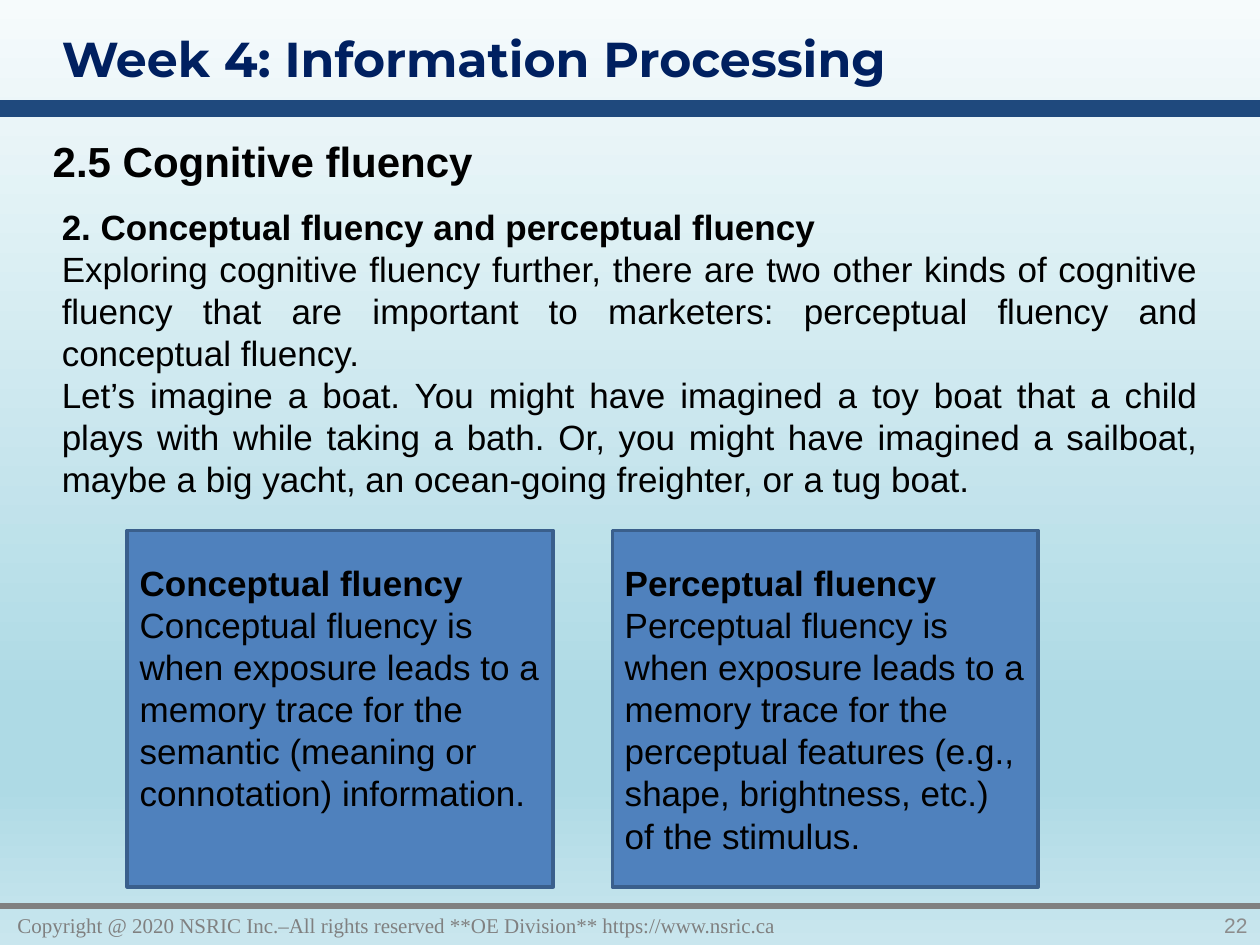
import pptx
import pptx.oxml
import pptx.util
import pptx.dml.color
import pptx.enum.shapes
import pptx.enum.text
from lxml import etree

Inches, Pt = pptx.util.Inches, pptx.util.Pt
RGB = pptx.dml.color.RGBColor
ALIGN, ANCHOR = pptx.enum.text.PP_ALIGN, pptx.enum.text.MSO_ANCHOR

BLACK = RGB(0x00, 0x00, 0x00)
NAVY = RGB(0x00, 0x20, 0x60)
BAND = RGB(0x1F, 0x49, 0x7D)
GREY = RGB(0x80, 0x80, 0x80)
LIGHT_GREY = RGB(0x8C, 0x8C, 0x8C)
CARD = RGB(0x4F, 0x81, 0xBD)
CARD_EDGE = RGB(0x3A, 0x5F, 0x8C)
SKY = [(0, RGB(0xF6, 0xFB, 0xFC)), (74, RGB(0xAE, 0xDA, 0xE5)),
       (83, RGB(0xAE, 0xDA, 0xE5)), (100, RGB(0xC9, 0xE6, 0xEE))]


class SlideBuilder:
    font, size, color = "Arial", 20, BLACK

    def __init__(self, slide):
        self.slide = slide

    def background(self, stops):
        fill = self.slide.background.fill
        fill.gradient()
        fill.gradient_angle = 270  # top to bottom
        stop_list = self.slide.element.find(".//" + pptx.oxml.ns.qn("a:gsLst"))
        for old in list(stop_list):
            stop_list.remove(old)
        for percent, color in stops:
            stop = etree.SubElement(stop_list, pptx.oxml.ns.qn("a:gs"), pos=str(percent * 1000))
            etree.SubElement(stop, pptx.oxml.ns.qn("a:srgbClr"), val=str(color))

    def rule(self, y, color, width):
        line = self.slide.shapes.add_connector(
            pptx.enum.shapes.MSO_CONNECTOR.STRAIGHT, 0, Inches(y), Inches(10), Inches(y))
        line.line.color.rgb = color
        line.line.width = Pt(width)
        etree.SubElement(line._element.spPr, pptx.oxml.ns.qn("a:effectLst"))

    def set_text(self, sp, lines, bold_first=False, size=None, color=None, font=None,
                 align=ALIGN.LEFT, anchor=ANCHOR.TOP):
        tf = sp.text_frame
        tf.text = "\n".join(lines)
        tf.word_wrap = True
        tf.auto_size = pptx.enum.text.MSO_AUTO_SIZE.NONE
        tf.vertical_anchor = anchor
        for i, p in enumerate(tf.paragraphs):
            p.alignment = align
            p.space_before = p.space_after = Pt(0)
            for r in p.runs:
                r.font.name = font or self.font
                r.font.size = Pt(size or self.size)
                r.font.bold = bold_first and i == 0
                r.font.color.rgb = color or self.color

    def placeholder(self, sp, box, lines, **style):
        sp.left, sp.top, sp.width, sp.height = map(Inches, box)
        self.set_text(sp, lines, **style)
        for p in sp.text_frame.paragraphs:
            pPr = p._p.get_or_add_pPr()
            pPr.set("marL", "0")
            pPr.set("indent", "0")
            etree.SubElement(pPr, pptx.oxml.ns.qn("a:buNone"))

    def text(self, box, line, **style):
        self.set_text(self.slide.shapes.add_textbox(*map(Inches, box)), [line], **style)

    def card(self, box, lines):
        sp = self.slide.shapes.add_shape(
            pptx.enum.shapes.MSO_SHAPE.RECTANGLE, *map(Inches, box))
        sp.shadow.inherit = False
        sp.fill.solid()
        sp.fill.fore_color.rgb = CARD
        sp.line.color.rgb = CARD_EDGE
        sp.line.width = Pt(2)
        sp.text_frame.margin_top = Inches(0.25)
        self.set_text(sp, lines, bold_first=True)


def main():
    prs = pptx.Presentation()
    prs.slide_width, prs.slide_height = Inches(10), Inches(7.5)
    s = prs.slides.add_slide(prs.slide_layouts[1])
    b = SlideBuilder(s)

    # Background, rules and footer
    b.background(SKY)
    b.rule(0.86, BAND, 10)
    b.rule(7.19, GREY, 3)
    b.text((0.04, 7.19, 8.27, 0.31),
           "Copyright @ 2020 NSRIC Inc.–All rights reserved **OE Division** https://www.nsric.ca",
           size=12, color=GREY, font="Times New Roman", anchor=ANCHOR.MIDDLE)
    b.text((8.59, 7.19, 1.41, 0.31), "22", size=12, color=LIGHT_GREY,
           align=ALIGN.RIGHT, anchor=ANCHOR.MIDDLE)

    # Title, section heading and body
    b.placeholder(s.shapes.title, (0.39, 0.18, 8.76, 0.57), ["Week 4: Information Processing"],
                  bold_first=True, size=28, color=NAVY, font="Montserrat")
    b.text((0.32, 1.03, 9.66, 0.5), "2.5 Cognitive fluency", bold_first=True, size=24)
    b.placeholder(s.placeholders[1], (0.39, 1.58, 9.22, 2.5), [
        "2. Conceptual fluency and perceptual fluency",
        "Exploring cognitive fluency further, there are two other kinds of cognitive fluency "
        "that are important to marketers: perceptual fluency and conceptual fluency.",
        "Let’s imagine a boat. You might have imagined a toy boat that a child plays with while "
        "taking a bath. Or, you might have imagined a sailboat, maybe a big yacht, an "
        "ocean-going freighter, or a tug boat.",
    ], bold_first=True, align=ALIGN.JUSTIFY)

    # Definition cards
    definitions = [
        ("Conceptual fluency", "Conceptual fluency is when exposure leads to a memory trace for "
         "the semantic (meaning or connotation) information."),
        ("Perceptual fluency", "Perceptual fluency is when exposure leads to a memory trace for "
         "the perceptual features (e.g., shape, brightness, etc.) of the stimulus."),
    ]
    for i, lines in enumerate(definitions):
        b.card((1.01 + 3.85 * i, 4.21, 3.38, 2.83), lines)

    prs.save("out.pptx")


if __name__ == "__main__":
    main()
